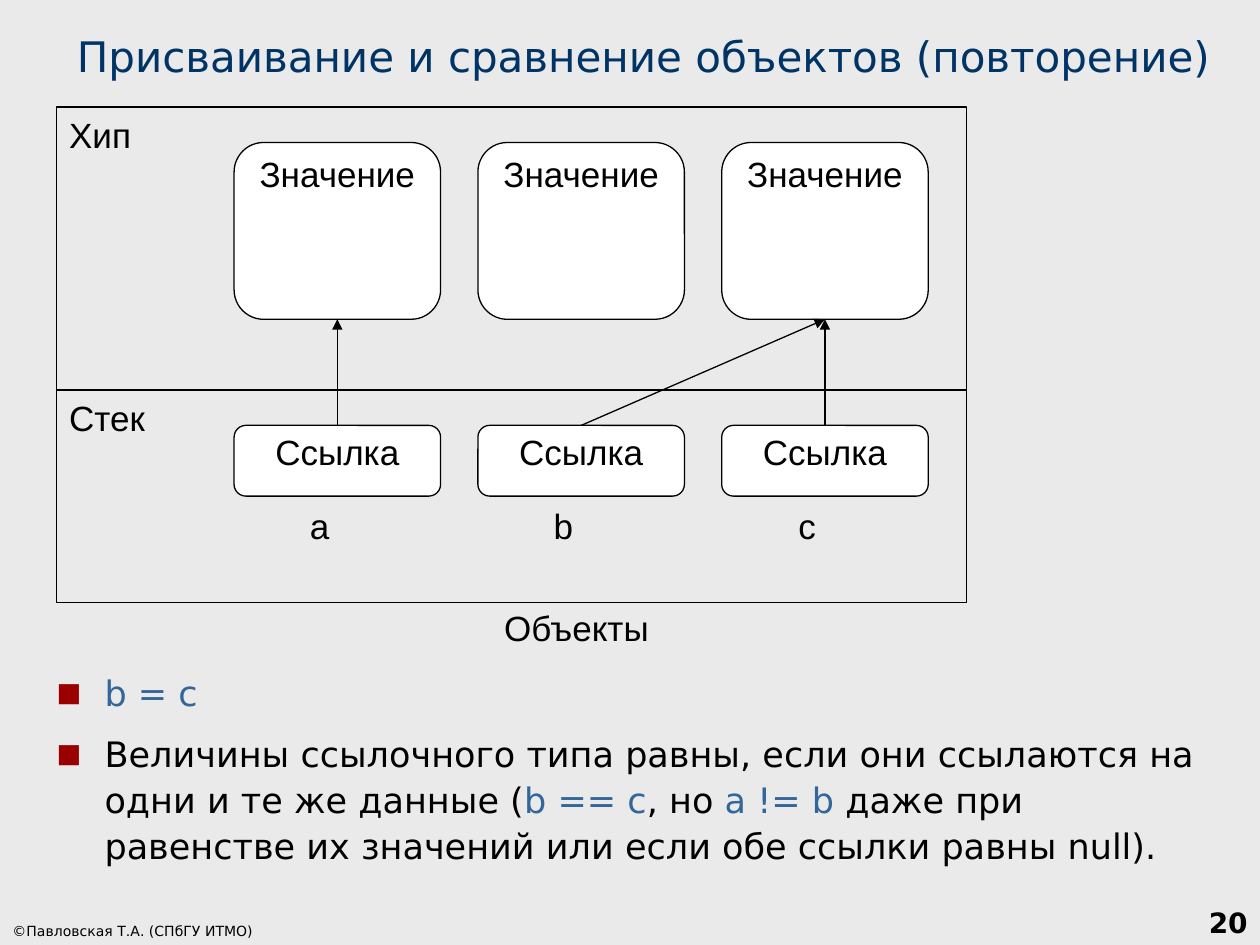
from dataclasses import dataclass

from lxml.etree import SubElement
from pptx import Presentation
from pptx.dml.color import RGBColor
from pptx.enum.shapes import MSO_CONNECTOR, MSO_SHAPE
from pptx.enum.text import MSO_ANCHOR as Anchor, MSO_AUTO_SIZE as AutoSize, PP_ALIGN as Align
from pptx.oxml.ns import qn
from pptx.util import Inches, Pt


@dataclass(frozen=True)
class Theme:
    background: str = "EAEAEA"
    title: str = "003366"
    code: str = "336699"
    ink: str = "000000"
    bullet: str = "9A0000"
    box: str = "FFFFFF"
    text_font: str = "DejaVu Sans"
    diagram_font: str = "Arial"
    title_size: int = 24
    body_size: int = 20
    number_size: int = 16
    credit_size: int = 8
    line_width: float = 0.75


THEME = Theme()
WIDTH, HEIGHT = 10, 7.5
ROWS = 14  # grid rows of the diagram: 8 for the heap, 6 for the stack
COLUMN_START, COLUMN_STEP, COLUMN_WIDTH = 0.195, 0.268, 0.227  # shares of its width


def rgb(code):
    return RGBColor.from_string(code)


def place(part, box):
    part.left, part.top, part.width, part.height = (Inches(length) for length in box)


def style(font, size, color=THEME.ink, name=THEME.text_font, bold=False):
    font.size, font.name, font.bold = Pt(size), name, bold
    font.color.rgb = rgb(color)


def add_title(slide, box, text):
    title = slide.shapes.title
    place(title, box)
    frame = title.text_frame
    frame.text = text
    frame.auto_size = AutoSize.NONE
    frame.vertical_anchor = Anchor.BOTTOM
    frame.paragraphs[0].alignment = Align.LEFT
    style(frame.paragraphs[0].runs[0].font, THEME.title_size, THEME.title)


def add_bullet(paragraph):
    props = paragraph._p.get_or_add_pPr()
    props.set("marL", str(Inches(0.38)))
    props.set("indent", str(-Inches(0.38)))
    SubElement(SubElement(props, qn("a:buClr")), qn("a:srgbClr"), val=THEME.bullet)
    SubElement(props, qn("a:buSzPct"), val="75000")
    SubElement(props, qn("a:buFont"), typeface=THEME.text_font)
    SubElement(props, qn("a:buChar"), char="■")


def add_body(slide, box, items):
    """Each item is a list of (text, colour) pieces."""
    body = slide.placeholders[1]
    place(body, box)
    frame = body.text_frame
    frame.auto_size = AutoSize.NONE
    for index, pieces in enumerate(items):
        paragraph = frame.paragraphs[0] if index == 0 else frame.add_paragraph()
        add_bullet(paragraph)
        paragraph.line_spacing = 1.1
        paragraph.space_before = Pt(4 if index else 0)
        paragraph.space_after = Pt(4)
        for text, color in pieces:
            run = paragraph.add_run()
            run.text = text
            style(run.font, THEME.body_size, color)


def add_box(slide, box, text, kind=MSO_SHAPE.ROUNDED_RECTANGLE, fill=None, outlined=True):
    shape = slide.shapes.add_shape(kind, *(Inches(length) for length in box))
    shape.shadow.inherit = False
    if fill:
        shape.fill.solid()
        shape.fill.fore_color.rgb = rgb(fill)
    else:
        shape.fill.background()
    if outlined:
        shape.line.color.rgb = rgb(THEME.ink)
        shape.line.width = Pt(THEME.line_width)
    else:
        shape.line.fill.background()
    frame = shape.text_frame
    frame.text = text
    frame.vertical_anchor = Anchor.TOP
    paragraph = frame.paragraphs[0]
    if kind == MSO_SHAPE.ROUNDED_RECTANGLE:
        frame.margin_left = frame.margin_right = Inches(0.02)
        frame.margin_top = frame.margin_bottom = Inches(0.01)
        paragraph.alignment = Align.CENTER
    else:
        paragraph.alignment = Align.LEFT
    style(paragraph.runs[0].font, THEME.body_size, name=THEME.diagram_font)
    return shape


def add_arrow(slide, reference, value):
    arrow = slide.shapes.add_connector(MSO_CONNECTOR.STRAIGHT, 0, 0, 0, 0)
    arrow.begin_connect(reference, 0)
    arrow.end_connect(value, 2)
    arrow.line.color.rgb = rgb(THEME.ink)
    arrow.line.width = Pt(THEME.line_width)
    SubElement(arrow.line._get_or_add_ln(), qn("a:tailEnd"), type="triangle")
    SubElement(arrow._element.spPr, qn("a:effectLst"))


def add_memory_diagram(slide, box, names, targets):
    left, top, width, height = box

    def cell(x, row, share, rows):
        return (left + x * width, top + row * height / ROWS,
                share * width, rows * height / ROWS)

    # Memory areas
    for text, row, rows in (("Хип", 0, 8), ("Стек", 8, 6)):
        add_box(slide, cell(0, row, 1, rows), text, MSO_SHAPE.RECTANGLE)

    # Objects with their references and names
    values, references = [], []
    for index, name in enumerate(names):
        x = COLUMN_START + index * COLUMN_STEP
        values.append(add_box(slide, cell(x, 1, COLUMN_WIDTH, 5), "Значение", fill=THEME.box))
        references.append(add_box(slide, cell(x, 9, COLUMN_WIDTH, 2), "Ссылка", fill=THEME.box))
        add_box(slide, cell(x + 0.038, 11.1, 0.112, 2), name, outlined=False)
    add_box(slide, cell(0.4, ROWS, 0.343, 2), "Объекты", outlined=False)

    # Which value each reference points to
    for reference, target in zip(references, targets):
        add_arrow(slide, reference, values[target])


def add_footer_text(slide, box, text, size, align, bold=False):
    footer = slide.shapes.add_textbox(*(Inches(length) for length in box))
    frame = footer.text_frame
    frame.word_wrap = True
    frame.vertical_anchor = Anchor.BOTTOM
    frame.text = text
    frame.paragraphs[0].alignment = align
    style(frame.paragraphs[0].runs[0].font, size, bold=bold)


def main():
    deck = Presentation()
    deck.slide_width, deck.slide_height = Inches(WIDTH), Inches(HEIGHT)
    slide = deck.slides.add_slide(deck.slide_layouts[1])
    slide.background.fill.solid()
    slide.background.fill.fore_color.rgb = rgb(THEME.background)

    add_title(slide, (0.51, 0.19, 9.37, 0.5), "Присваивание и сравнение объектов (повторение)")
    add_memory_diagram(slide, (0.45, 0.85, 7.22, 3.93), ("а", "b", "c"), (0, 2, 2))
    add_body(slide, (0.35, 5.25, 9.37, 1.89), [
        [("b = c", THEME.code)],
        [("Величины ссылочного типа равны, если они ссылаются на одни и те же данные (", THEME.ink),
         ("b == c", THEME.code),
         (", но ", THEME.ink),
         ("a != b", THEME.code),
         (" даже при равенстве их значений или если обе ссылки равны null).", THEME.ink)],
    ])
    add_footer_text(slide, (0, HEIGHT - 0.28, 3.11, 0.28), "©Павловская Т.А. (СПбГУ ИТМО)",
                    THEME.credit_size, Align.LEFT)
    add_footer_text(slide, (WIDTH - 2.08, HEIGHT - 0.5, 2.08, 0.5), "20",
                    THEME.number_size, Align.RIGHT, bold=True)
    deck.save("out.pptx")


if __name__ == "__main__":
    main()
